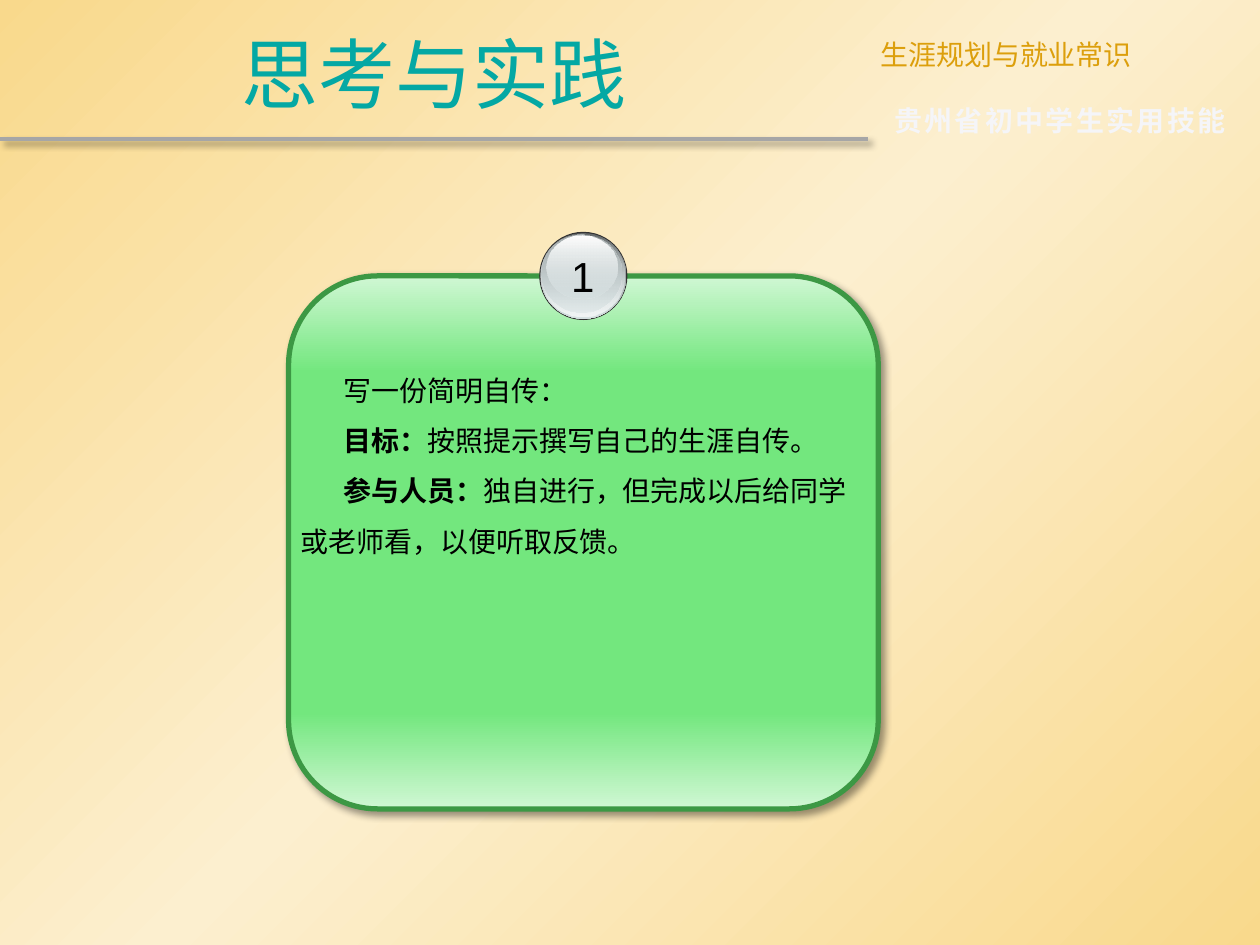
from lxml import etree
from pptx import Presentation
from pptx import util as u
from pptx.dml.color import RGBColor
from pptx.enum import shapes, text
from pptx.oxml.ns import qn

CJK = "Noto Sans CJK SC"
GREEN, PALE_GREEN = "73E77E", "D0F7D4"
HEAD_W = 6.89
CARD_X, CARD_W = 2.29, 4.68


def rgb(value):
    return RGBColor.from_string(value)


def inches(*values):
    return [u.Inches(v) for v in values]


def sub(parent, tag, **attrs):
    return etree.SubElement(parent, qn(tag), {k: str(v) for k, v in attrs.items()})


def set_gradient(fill, element, stops, angle):
    """Stops are (position %, colour) with an optional opacity %."""
    fill.gradient()
    grad = element.find(".//" + qn("a:gradFill"))
    for child in list(grad):
        grad.remove(child)
    gs_list = sub(grad, "a:gsLst")
    for pos, color, *opacity in stops:
        clr = sub(sub(gs_list, "a:gs", pos=pos * 1000), "a:srgbClr", val=color)
        if opacity:
            sub(clr, "a:alpha", val=opacity[0] * 1000)
    sub(grad, "a:lin", ang=angle * 60000, scaled=0)


def add_shadow(sp):
    effects = sub(sp._element.spPr, "a:effectLst")
    shadow = sub(effects, "a:outerShdw", blurRad=u.Pt(4), dist=u.Pt(3),
                 dir=45 * 60000, algn="tl", rotWithShape=0)
    sub(sub(shadow, "a:srgbClr", val="000000"), "a:alpha", val=40000)


def write(sp, paragraphs, size=16, color="000000", font=CJK, align=None,
          anchor=text.MSO_ANCHOR.TOP, spacing=None, indent=0, tracking=0, wrap=True):
    """Each paragraph is a list of (text, bold) runs."""
    tf = sp.text_frame
    tf.word_wrap = wrap
    tf.auto_size = text.MSO_AUTO_SIZE.NONE
    tf.vertical_anchor = anchor
    for i, runs in enumerate(paragraphs):
        p = tf.add_paragraph() if i else tf.paragraphs[0]
        p.alignment, p.line_spacing = align, spacing
        if indent:
            p._p.get_or_add_pPr().set("indent", str(u.Inches(indent)))
        for words, bold in runs:
            r = p.add_run()
            r.text = words
            r.font.size, r.font.bold, r.font.name = u.Pt(size), bold, font
            r.font.color.rgb = rgb(color)
            rpr = r._r.get_or_add_rPr()
            sub(rpr, "a:ea", typeface=font)
            if tracking:
                rpr.set("spc", str(int(tracking * 100)))


def add_text(s, box, paragraphs, **fmt):
    write(s.shapes.add_textbox(*inches(*box)), paragraphs, **fmt)


def add_header(s):
    title = s.shapes.title
    title.left, title.top, title.width, title.height = inches(0, 0.07, HEAD_W, 1.02)
    write(title, [[("思考与实践", False)]], size=44, color="04A8A4",
          align=text.PP_ALIGN.CENTER, anchor=text.MSO_ANCHOR.MIDDLE)
    rule = s.shapes.add_connector(shapes.MSO_CONNECTOR.STRAIGHT,
                                  *inches(0, 1.1, HEAD_W, 1.1))
    rule.line.color.rgb, rule.line.width = rgb("A6A6A6"), u.Pt(2.25)
    add_shadow(rule)
    add_text(s, (HEAD_W, 0.25, 10 - HEAD_W, 0.37),
             [[("生涯规划与就业常识", False)]], color="DC9F0C")
    add_text(s, (7, 0.77, 3, 0.37), [[("贵州省初中学生实用技能", True)]],
             color="F5F5F8", tracking=1.4)


def add_card(s):
    card = s.shapes.add_shape(shapes.MSO_SHAPE.ROUNDED_RECTANGLE,
                              *inches(CARD_X, 2.19, CARD_W, 4.23))
    set_gradient(card.fill, card._element,
                 [(0, PALE_GREEN), (18, GREEN), (82, GREEN), (100, PALE_GREEN)], 90)
    card.line.color.rgb, card.line.width = rgb("3C9844"), u.Pt(3)
    add_shadow(card)
    add_text(s, (CARD_X, 2.78, CARD_W, 1.72), [
        [("写一份简明自传：", False)],
        [("目标：", True), ("按照提示撰写自己的生涯自传。", False)],
        [("参与人员：", True),
         ("独自进行，但完成以后给同学或老师看，以便听取反馈。", False)],
    ], spacing=1.5, indent=0.34)


def add_badge(s, number):
    """A glossy ball built from stacked ellipses, with a number on top."""
    group = s.shapes.add_group_shape()
    layers = [
        ((4.28, 1.84, 0.7, 0.7), [(0, "333333"), (100, "333333")]),
        ((4.29, 1.85, 0.68, 0.68), [(0, "636869"), (100, "D6E1E2")]),
        ((4.29, 1.85, 0.67, 0.66), [(0, "D6E1E2", 0), (100, "F1F5F5")]),
        ((4.3, 1.86, 0.63, 0.62), [(0, "AAB2B3"), (100, "D6E1E2", 48)]),
        ((4.34, 1.87, 0.56, 0.5), [(0, "FFFFFF"), (100, "D6E1E2", 38)]),
    ]
    for box, stops in layers:
        ball = group.shapes.add_shape(shapes.MSO_SHAPE.OVAL, *inches(*box))
        ball.shadow.inherit = False
        ball.line.fill.background()
        if stops[0][1] == stops[1][1]:
            ball.fill.solid()
            ball.fill.fore_color.rgb = rgb(stops[0][1])
        else:
            set_gradient(ball.fill, ball._element, stops, 90)
    label = group.shapes.add_textbox(*inches(4.43, 1.94, 0.39, 0.5))
    write(label, [[(number, False)]], size=24, font="Arial",
          align=text.PP_ALIGN.CENTER, wrap=False)


def main():
    prs = Presentation()
    prs.slide_width, prs.slide_height = inches(10, 7.5)
    s = prs.slides.add_slide(prs.slide_layouts[5])
    set_gradient(s.background.fill, s._element,
                 [(0, "F9D98C"), (50, "FCEFCF"), (100, "F9D98C")], 45)
    add_header(s)
    add_card(s)
    add_badge(s, "1")
    prs.save("out.pptx")


if __name__ == "__main__":
    main()
